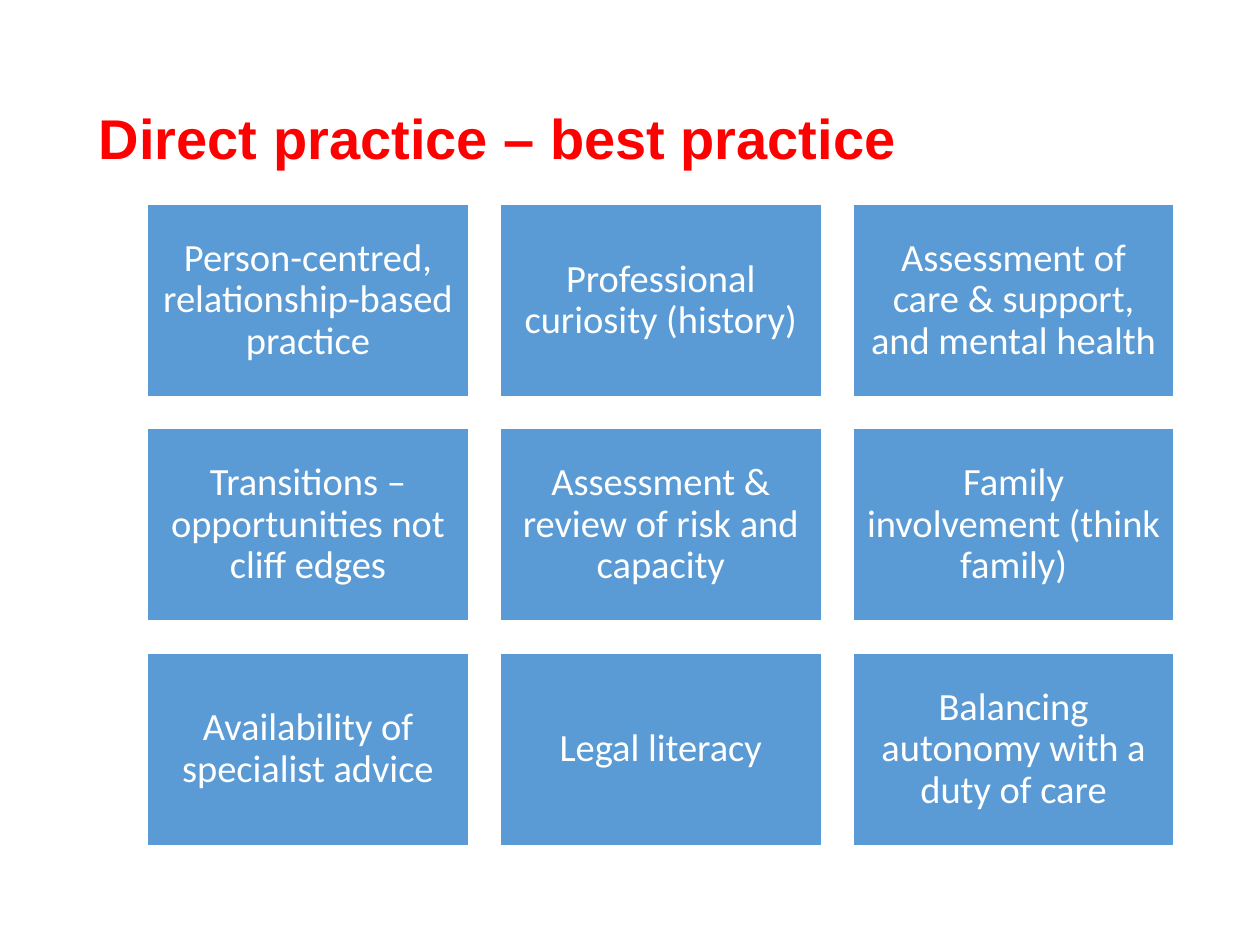
"""Build the best-practice slide: a title above a grid of nine themes."""
from pptx import Presentation
from pptx.dml.color import RGBColor
from pptx.enum.shapes import MSO_SHAPE as Shape
from pptx.enum.text import MSO_ANCHOR as Anchor, PP_ALIGN as Align
from pptx.util import Pt

THEMES = [
    "Person-centred, relationship-based practice",
    "Professional curiosity (history)",
    "Assessment of care & support, and mental health",
    "Transitions – opportunities not cliff edges",
    "Assessment & review of risk and capacity",
    "Family involvement (think family)",
    "Availability of specialist advice",
    "Legal literacy",
    "Balancing autonomy with a duty of care",
]
COLUMNS = 3
GRID_LEFT, GRID_TOP = 84.2, 116.6
TILE_WIDTH, TILE_HEIGHT = 183.6, 110.2
GAP = 18


def color(hex_code):
    """Return the colour for a hex string."""
    return RGBColor.from_string(hex_code)


def write(frame, wording, font_name, size, hex_code, align, bold=False):
    """Fill a text frame with one styled, vertically centred paragraph."""
    frame.word_wrap = True
    frame.vertical_anchor = Anchor.MIDDLE
    paragraph = frame.paragraphs[0]
    paragraph.text = wording
    paragraph.alignment = align
    paragraph.line_spacing = 0.9
    font = paragraph.font
    font.name, font.size, font.bold = font_name, Pt(size), bold
    font.color.rgb = color(hex_code)


def add_title(slide, wording):
    """Add the slide title."""
    title = slide.shapes.add_textbox(Pt(49.5), Pt(28.8), Pt(621), Pt(104.4))
    write(title.text_frame, wording, "Arial", 32, "FF0000", Align.LEFT, bold=True)


def add_tile(slide, wording, left, top):
    """Add one theme tile."""
    tile = slide.shapes.add_shape(
        Shape.RECTANGLE, Pt(left), Pt(top), Pt(TILE_WIDTH), Pt(TILE_HEIGHT))
    tile.shadow.inherit = False
    tile.fill.solid()
    tile.fill.fore_color.rgb = color("5B9BD5")
    tile.line.color.rgb = color("FFFFFF")
    tile.line.width = Pt(1)
    frame = tile.text_frame
    frame.margin_left = frame.margin_right = Pt(6.6)
    frame.margin_top = frame.margin_bottom = Pt(6.6)
    write(frame, wording, "Calibri", 22, "FFFFFF", Align.CENTER)


def main():
    """Build and save the slide."""
    deck = Presentation()
    deck.slide_width, deck.slide_height = Pt(720), Pt(540)
    slide = deck.slides.add_slide(deck.slide_layouts[6])
    add_title(slide, "Direct practice – best practice")
    for index, theme in enumerate(THEMES):
        row, column = divmod(index, COLUMNS)
        add_tile(slide, theme,
                 GRID_LEFT + column * (TILE_WIDTH + GAP),
                 GRID_TOP + row * (TILE_HEIGHT + GAP))
    deck.save("out.pptx")


if __name__ == "__main__":
    main()
